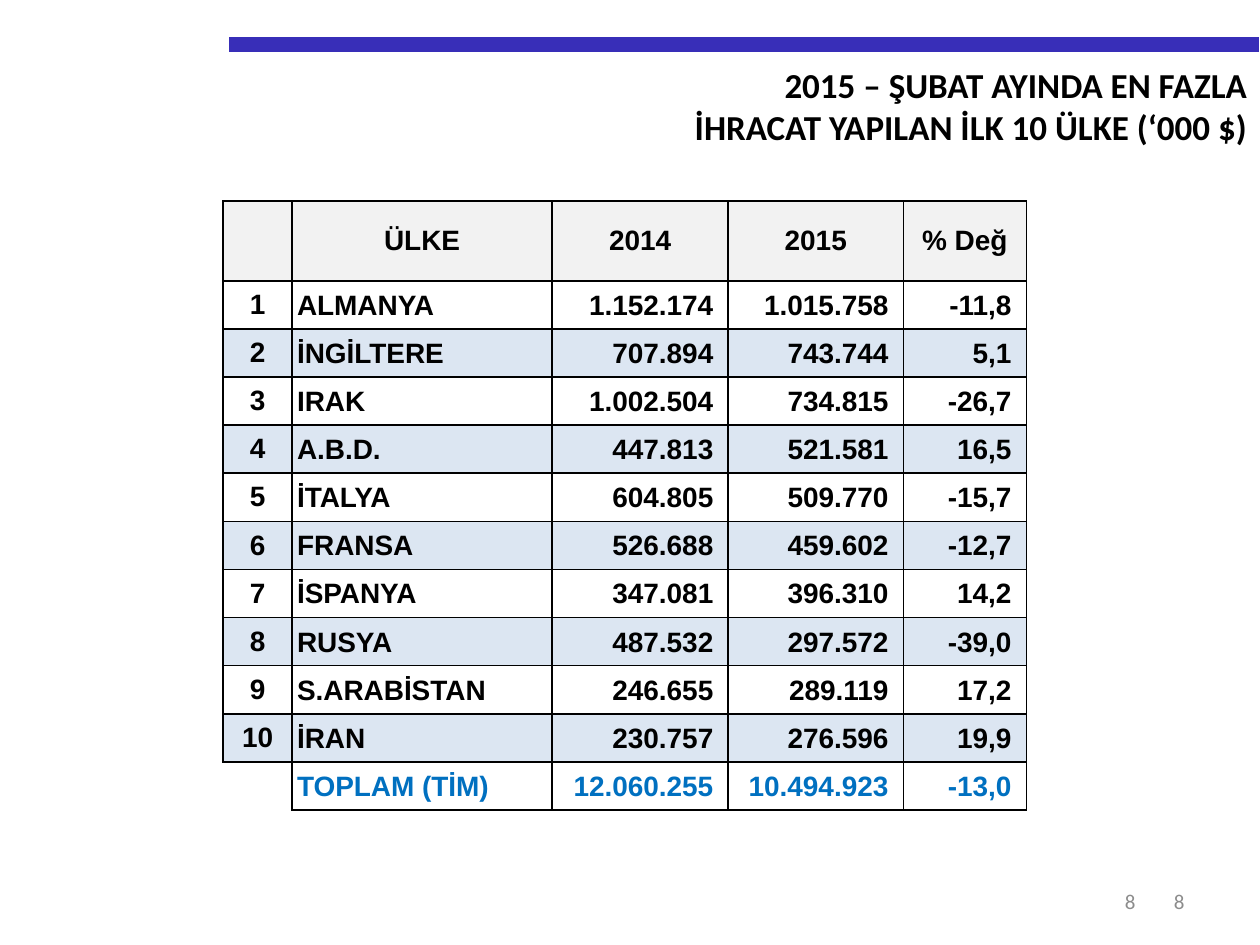
from lxml import etree
from pptx import Presentation
from pptx import util as u
from pptx.dml.color import RGBColor
from pptx.enum import shapes, text
from pptx.oxml import ns

COLORS = {
    "bar": "382EB8", "ink": "000000", "total": "0070C0", "page": "8C8C8C",
    "header": "F2F2F2", "band": "DCE6F2", "border": "000000",
}
TITLE = ["2015 – ŞUBAT AYINDA EN FAZLA", "İHRACAT YAPILAN İLK 10 ÜLKE (‘000 $)"]
HEADER = ["", "ÜLKE", "2014", "2015", "% Değ"]
COUNTRIES = [
    ["ALMANYA", "1.152.174", "1.015.758", "-11,8"],
    ["İNGİLTERE", "707.894", "743.744", "5,1"],
    ["IRAK", "1.002.504", "734.815", "-26,7"],
    ["A.B.D.", "447.813", "521.581", "16,5"],
    ["İTALYA", "604.805", "509.770", "-15,7"],
    ["FRANSA", "526.688", "459.602", "-12,7"],
    ["İSPANYA", "347.081", "396.310", "14,2"],
    ["RUSYA", "487.532", "297.572", "-39,0"],
    ["S.ARABİSTAN", "246.655", "289.119", "17,2"],
    ["İRAN", "230.757", "276.596", "19,9"],
]
TOTAL = ["", "TOPLAM (TİM)", "12.060.255", "10.494.923", "-13,0"]
COLUMN_WIDTHS = [1.39, 5.24, 3.55, 3.53, 2.48]
HEADER_HEIGHT = 1.61
ALIGN = text.PP_ALIGN
MARGINS = {
    ALIGN.CENTER: (0.25, 0.13, 0.25, 0.13),
    ALIGN.LEFT: (0.1, 0.03, 0.03, 0),
    ALIGN.RIGHT: (0.03, 0.03, 0.3, 0),
}


def set_attributes(target, values):
    for name, value in values.items():
        setattr(target, name, value)


def place(shape, box):
    names = ("left", "top", "width", "height")
    set_attributes(shape, dict(zip(names, map(u.Cm, box))))


def write(paragraph, words, alignment, color, font):
    paragraph.alignment = alignment
    run = paragraph.add_run()
    run.text = words
    set_attributes(run.font, font)
    run.font.color.rgb = RGBColor.from_string(COLORS[color])


def add_bar(slide, box):
    left, top, width, height = box
    middle = u.Cm(top + height / 2)
    bar = slide.shapes.add_connector(
        shapes.MSO_CONNECTOR.STRAIGHT, u.Cm(left), middle, u.Cm(left + width), middle)
    bar.line.width = u.Cm(height)
    bar.line.color.rgb = RGBColor.from_string(COLORS["bar"])
    etree.SubElement(bar._element.spPr, ns.qn("a:effectLst"))


def add_title(slide, box):
    title = slide.shapes.title
    place(title, box)
    frame = title.text_frame
    set_attributes(frame, {
        "word_wrap": True, "auto_size": text.MSO_AUTO_SIZE.NONE,
        "vertical_anchor": text.MSO_ANCHOR.TOP})
    for index, words in enumerate(TITLE):
        paragraph = frame.add_paragraph() if index else frame.paragraphs[0]
        write(paragraph, words, ALIGN.RIGHT, "ink",
              {"name": "Calibri", "size": u.Pt(20), "bold": True})


def add_page_number(slide, box):
    frame = slide.shapes.add_textbox(*map(u.Cm, box)).text_frame
    set_attributes(frame, {"word_wrap": True, "vertical_anchor": text.MSO_ANCHOR.MIDDLE})
    write(frame.paragraphs[0], "8", ALIGN.RIGHT, "page",
          {"name": "Calibri", "size": u.Pt(12)})


def set_borders(cell, visible):
    properties = cell._tc.get_or_add_tcPr()
    for side in "LRTB":
        line = etree.SubElement(properties, ns.qn(f"a:ln{side}"), w=str(u.Pt(1)))
        if side in visible:
            fill = etree.SubElement(line, ns.qn("a:solidFill"))
            etree.SubElement(fill, ns.qn("a:srgbClr"), val=COLORS["border"])
        else:
            etree.SubElement(line, ns.qn("a:noFill"))


def fill_cell(cell, words, alignment, color, fill, borders):
    set_borders(cell, borders)
    if fill:
        cell.fill.solid()
        cell.fill.fore_color.rgb = RGBColor.from_string(COLORS[fill])
    else:
        cell.fill.background()
    margins = MARGINS[alignment] if words else (0, 0, 0, 0)
    names = ("margin_left", "margin_top", "margin_right", "margin_bottom")
    set_attributes(cell, dict(zip(names, map(u.Cm, margins))))
    cell.vertical_anchor = text.MSO_ANCHOR.MIDDLE
    if words:
        write(cell.text_frame.paragraphs[0], words, alignment, color,
              {"name": "Arial", "size": u.Pt(16), "bold": True})


def add_country_table(slide, box):
    ranked = [[str(rank), *row] for rank, row in enumerate(COUNTRIES, 1)]
    rows = [HEADER, *ranked, TOTAL]
    last = len(rows) - 1
    table = slide.shapes.add_table(len(rows), len(HEADER), *map(u.Cm, box)).table
    set_attributes(table, {"first_row": False, "horz_banding": False})
    for column, width in zip(table.columns, COLUMN_WIDTHS):
        column.width = u.Cm(width)
    for index, values in enumerate(rows):
        height = (box[3] - HEADER_HEIGHT) / last if index else HEADER_HEIGHT
        table.rows[index].height = u.Cm(height)
        color = "total" if index == last else "ink"
        if index == 0:
            fill = "header"
        else:
            fill = "band" if index % 2 == 0 else None
        for column, words in enumerate(values):
            if index == 0 or column == 0:
                alignment = ALIGN.CENTER
            else:
                alignment = ALIGN.LEFT if column == 1 else ALIGN.RIGHT
            borders = "RT" if index == last and column == 0 else "LRTB"
            fill_cell(table.cell(index, column), words, alignment, color, fill, borders)


def main():
    presentation = Presentation()
    set_attributes(presentation, {"slide_width": u.Cm(25.4), "slide_height": u.Cm(19.05)})
    slide = presentation.slides.add_slide(presentation.slide_layouts[5])
    add_bar(slide, (4.62, 0.75, 20.76, 0.3))
    add_title(slide, (2.7, 1.15, 22.7, 1.96))
    add_country_table(slide, (4.5, 4.05, sum(COLUMN_WIDTHS), 12.28))
    for left, width in ((18.21, 5.92), (17.81, 5.33)):
        add_page_number(slide, (left, 17.65, width, 1.02))
    presentation.save("out.pptx")


if __name__ == "__main__":
    main()
